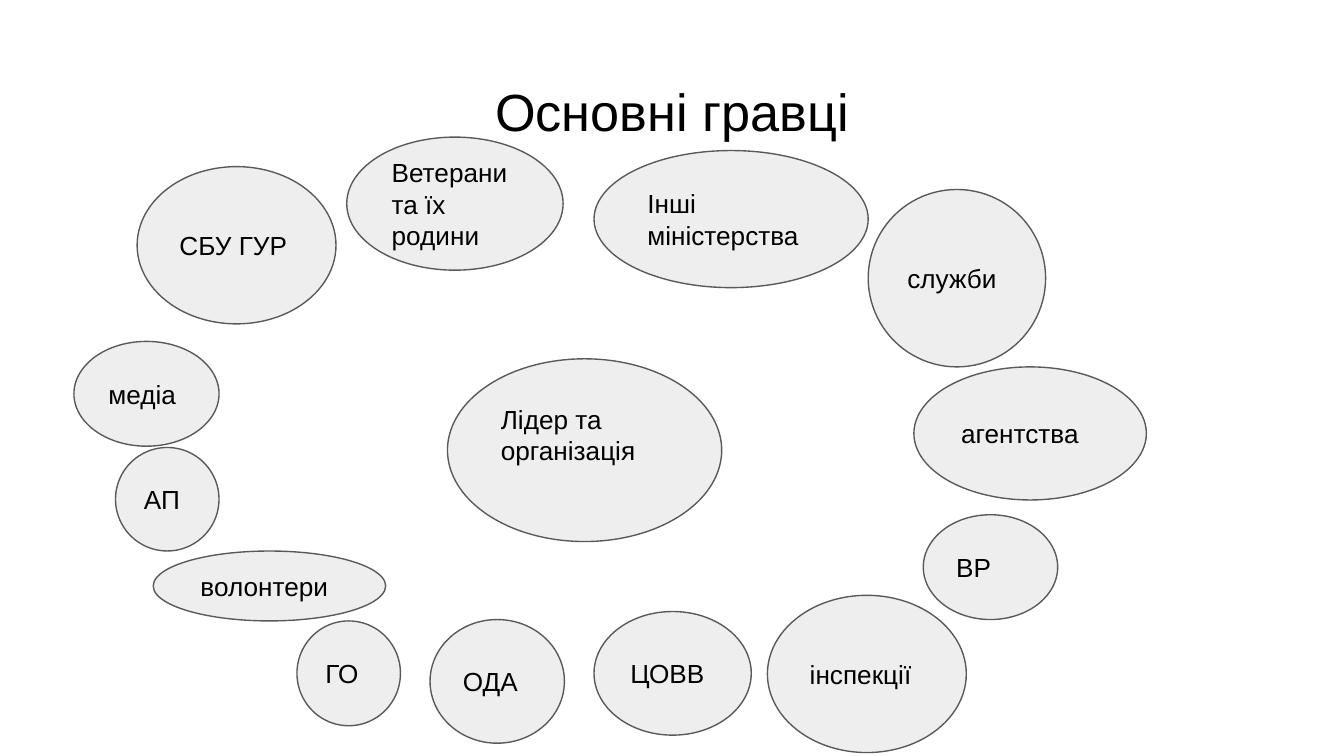
from pptx import Presentation
from pptx.dml.color import RGBColor
from pptx.enum.shapes import MSO_SHAPE as SHAPE
from pptx.enum.text import MSO_ANCHOR as ANCHOR, PP_ALIGN as ALIGN
from pptx.util import Inches, Pt

COLORS = {"text": "000000", "fill": "EEEEEE", "line": "595959"}
FONT = "Arial"
COLS, ROWS = 100, 56.25
CELL = Inches(10) // COLS
INSET = 1

LEADER = ("Лідер та організація", 33.3, 26.7, 20.4, 13.6)
PLAYERS = [
    ("Ветерани та їх родини", 25.8, 10.2, 16.1, 9.9),
    ("Інші міністерства", 44.2, 11.2, 20.4, 10.2),
    ("служби", 64.6, 14.1, 13.2, 13.2),
    ("агентства", 68, 27.3, 17.3, 9.9),
    ("інспекції", 57.1, 44.3, 14.8, 11.7),
    ("ЦОВВ", 44.2, 45.5, 11.7, 9.2),
    ("ОДА", 32, 46.1, 10, 9.2),
    ("ГО", 22.1, 46.2, 7.7, 7.8),
    ("волонтери", 11.4, 41, 17.3, 5.2),
    ("АП", 8.6, 33.3, 7.7, 7.7),
    ("ВР", 68.7, 38.3, 10, 7.8),
    ("медіа", 5.5, 25.4, 10.8, 7.8),
    ("СБУ ГУР", 10.2, 12.4, 14.8, 11.7),
]


def grid(*cells):
    """Convert grid cells to slide lengths."""
    return [round(c * CELL) for c in cells]


def color(name):
    """Look up a named colour."""
    return RGBColor.from_string(COLORS[name])


def write(sp, text, size, align, anchor, bottom=INSET):
    """Put one styled paragraph into a shape."""
    tf = sp.text_frame
    tf.word_wrap = True
    tf.vertical_anchor = anchor
    tf.margin_left, tf.margin_top, tf.margin_right, tf.margin_bottom = grid(
        INSET, INSET, INSET, bottom)
    p = tf.paragraphs[0]
    p.text = text
    p.alignment = align
    p.font.name = FONT
    p.font.size = Pt(size)
    p.font.color.rgb = color("text")


def add_title(s, text, *box):
    """Add the slide heading."""
    sp = s.shapes.add_textbox(*grid(*box))
    write(sp, text, 28, ALIGN.CENTER, ANCHOR.TOP)


def add_player(s, text, *box, bottom=INSET):
    """Add a labelled ellipse."""
    sp = s.shapes.add_shape(SHAPE.OVAL, *grid(*box))
    sp.shadow.inherit = False
    sp.fill.solid()
    sp.fill.fore_color.rgb = color("fill")
    sp.line.color.rgb = color("line")
    sp.line.width = Pt(0.75)
    write(sp, text, 14, ALIGN.LEFT, ANCHOR.MIDDLE, bottom)


def main():
    """Build and save the slide."""
    prs = Presentation()
    prs.slide_width, prs.slide_height = grid(COLS, ROWS)
    s = prs.slides.add_slide(prs.slide_layouts[6])
    add_title(s, "Основні гравці", 3.4, 4.9, 93.2, 6.3)
    add_player(s, *LEADER, bottom=3.3)
    for player in PLAYERS:
        add_player(s, *player)
    prs.save("out.pptx")


if __name__ == "__main__":
    main()
